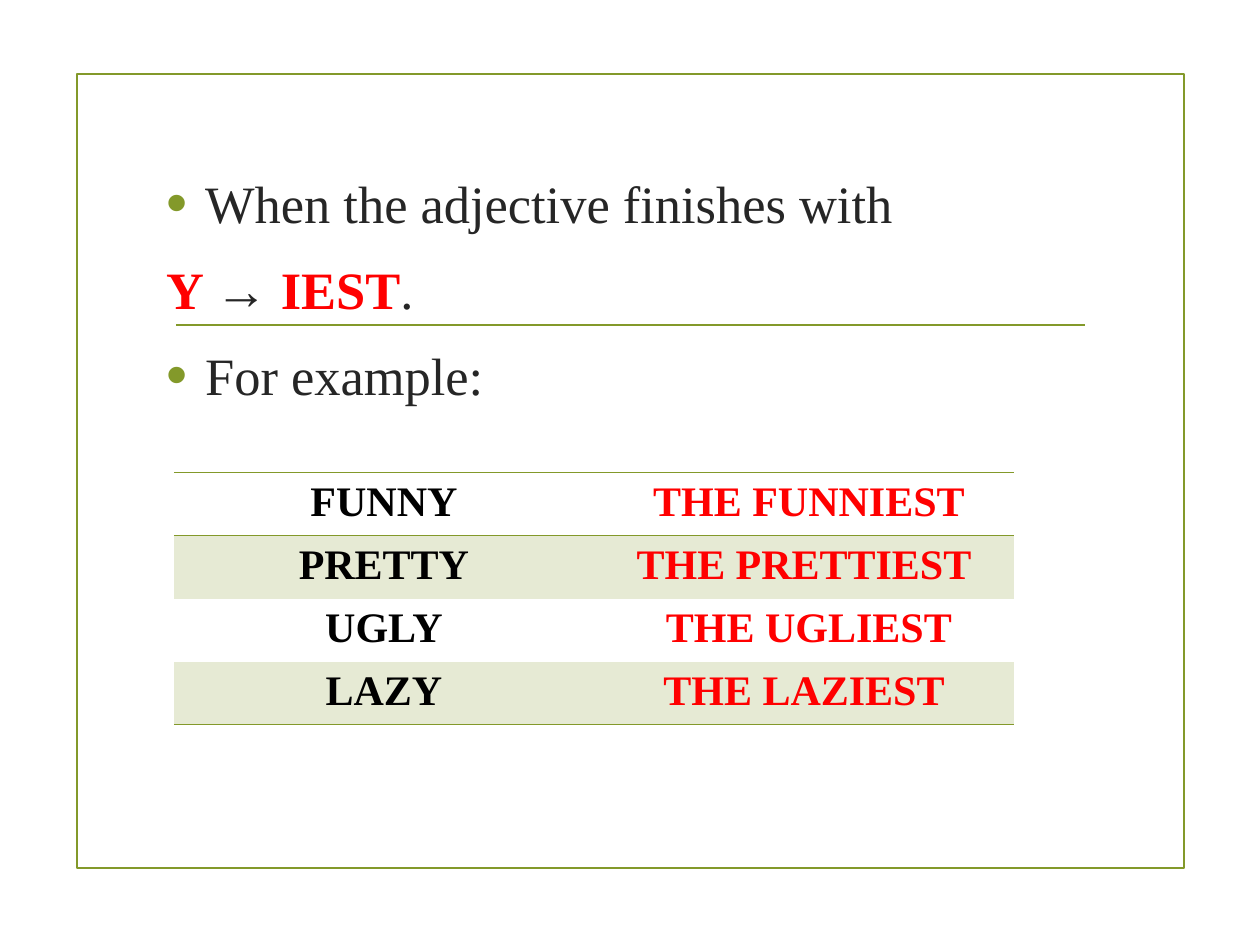
from lxml.etree import SubElement
from pptx import Presentation
from pptx.dml.color import RGBColor
from pptx.enum.shapes import MSO_CONNECTOR, MSO_SHAPE
from pptx.enum.text import MSO_ANCHOR, PP_ALIGN
from pptx.oxml.ns import qn
from pptx.util import Inches, Pt

COLORS = {
    "olive": "83992A",
    "band": "E6EAD4",
    "body": "262626",
    "red": "FF0000",
    "black": "000000",
}
FONT = "Times New Roman"
NO_STYLE = "{2D5ABB26-0587-4C30-8999-92F81FD0307C}"


def add_run(para, text, size, color, bold):
    span = para.add_run()
    span.text = text
    span.font.name = FONT
    span.font.size = Pt(size)
    span.font.bold = bold
    span.font.color.rgb = RGBColor.from_string(COLORS[color])


def add_border(cell, side):
    border = SubElement(cell._tc.get_or_add_tcPr(), qn(f"a:{side}"), w=str(Pt(1)))
    fill = SubElement(border, qn("a:solidFill"))
    SubElement(fill, qn("a:srgbClr"), val=COLORS["olive"])


deck = Presentation()
deck.slide_width = Inches(10)
deck.slide_height = Inches(7.5)
page = deck.slides.add_slide(deck.slide_layouts[6])
olive = RGBColor.from_string(COLORS["olive"])

frame = page.shapes.add_shape(
    MSO_SHAPE.RECTANGLE, Inches(0.61), Inches(0.59), Inches(8.79), Inches(6.3)
)
frame.shadow.inherit = False
frame.fill.background()
frame.line.color.rgb = olive
frame.line.width = Pt(1.25)

rule = page.shapes.add_connector(
    MSO_CONNECTOR.STRAIGHT, Inches(1.4), Inches(2.58), Inches(8.61), Inches(2.58)
)
rule.line.color.rgb = olive
rule.line.width = Pt(1.25)
SubElement(rule._element.spPr, qn("a:effectLst"))

box = page.shapes.add_textbox(Inches(1.22), Inches(1.31), Inches(7.44), Inches(3.84))
box.text_frame.word_wrap = True
paragraphs = [
    (True, PP_ALIGN.JUSTIFY, [("When the adjective finishes with", "body", False)]),
    (False, PP_ALIGN.JUSTIFY, [
        ("Y ", "red", True),
        ("→ ", "body", False),
        ("IEST", "red", True),
        (".", "body", False),
    ]),
    (True, PP_ALIGN.LEFT, [("For example:", "body", False)]),
]
for index, (bulleted, alignment, runs) in enumerate(paragraphs):
    para = box.text_frame.paragraphs[0] if index == 0 else box.text_frame.add_paragraph()
    para.alignment = alignment
    para.space_after = Pt(6)
    if index:
        para.space_before = Pt(7)
    if bulleted:
        properties = para._p.get_or_add_pPr()
        properties.set("marL", str(Inches(0.31)))
        properties.set("indent", str(Inches(-0.31)))
        bullet_color = SubElement(properties, qn("a:buClr"))
        SubElement(bullet_color, qn("a:srgbClr"), val=COLORS["olive"])
        SubElement(properties, qn("a:buSzPct"), val="115000")
        SubElement(properties, qn("a:buFont"), typeface="Arial")
        SubElement(properties, qn("a:buChar"), char="•")
    for text, color, bold in runs:
        add_run(para, text, 30, color, bold)

adjectives = [
    ("FUNNY", " THE FUNNIEST"),
    ("PRETTY", "THE PRETTIEST"),
    ("UGLY", " THE UGLIEST"),
    ("LAZY", "THE LAZIEST"),
]
row_height = 0.47
table_frame = page.shapes.add_table(
    len(adjectives), 2, Inches(1.38), Inches(3.75),
    Inches(6.67), Inches(row_height * len(adjectives)),
)
table = table_frame.table
table.first_row = False
table.horz_banding = False
table._tbl.tblPr.find(qn("a:tableStyleId")).text = NO_STYLE
borders = {0: ["lnT", "lnB"], len(adjectives) - 1: ["lnB"]}
for row, words in enumerate(adjectives):
    for column, (word, color) in enumerate(zip(words, ["black", "red"])):
        cell = table.cell(row, column)
        cell.vertical_anchor = MSO_ANCHOR.TOP
        for side in borders.get(row, []):
            add_border(cell, side)
        if row % 2:
            cell.fill.solid()
            cell.fill.fore_color.rgb = RGBColor.from_string(COLORS["band"])
        else:
            cell.fill.background()
        para = cell.text_frame.paragraphs[0]
        para.alignment = PP_ALIGN.CENTER
        add_run(para, word, 24, color, True)

deck.save("out.pptx")
